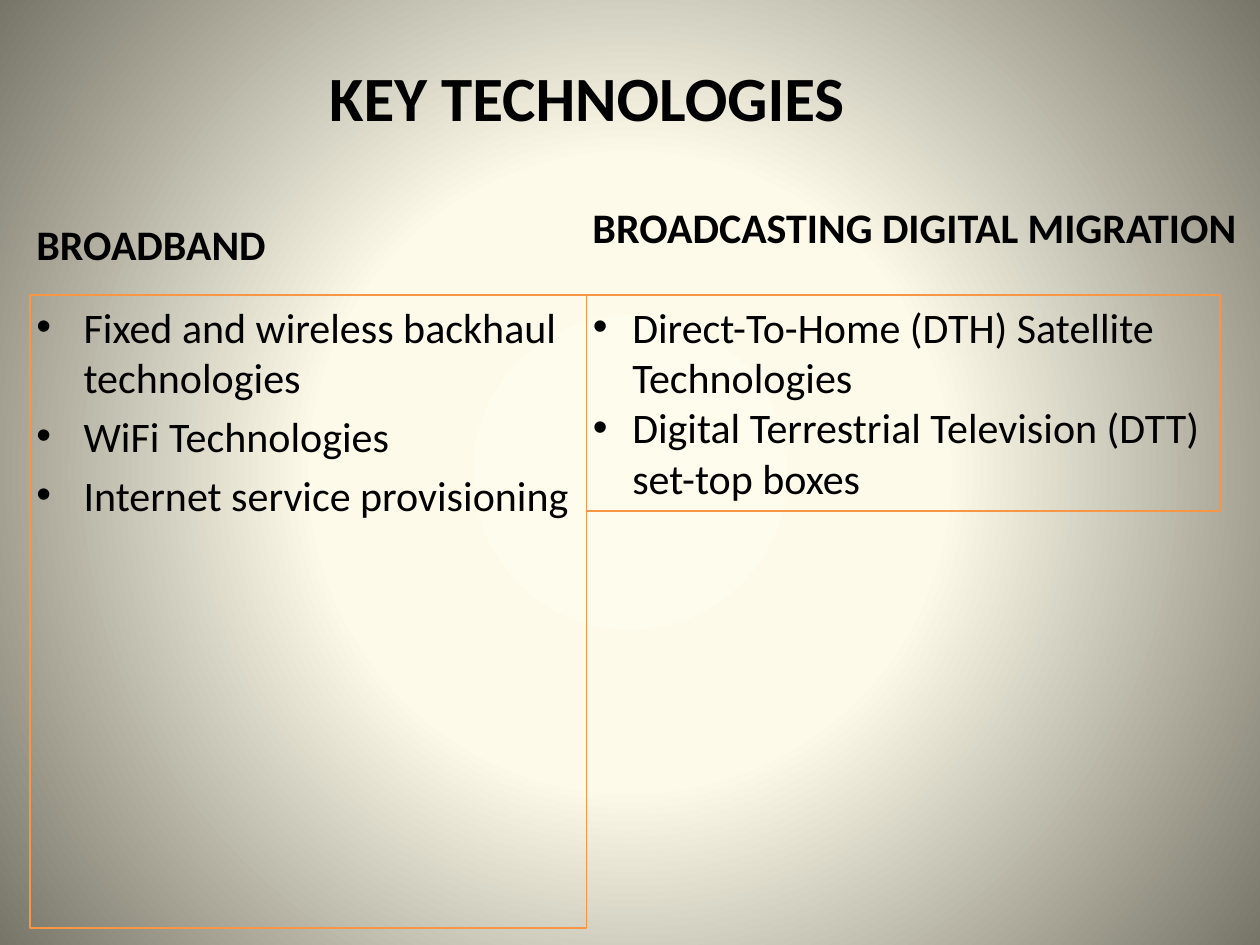
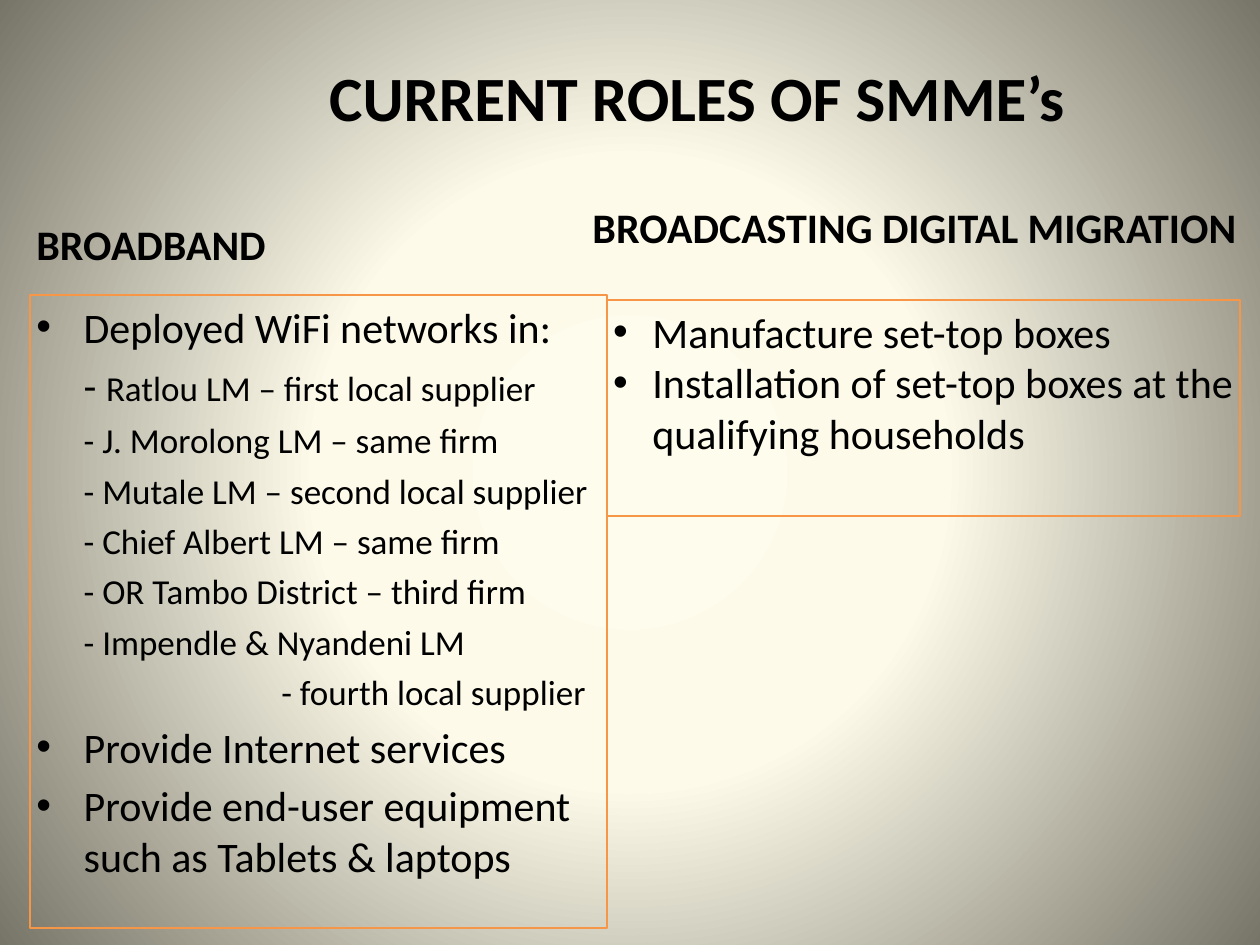
from dataclasses import dataclass

from lxml import etree
from pptx import Presentation
from pptx.dml.color import RGBColor
from pptx.enum.shapes import MSO_SHAPE
from pptx.enum.text import MSO_ANCHOR, PP_ALIGN
from pptx.oxml.ns import qn
from pptx.util import Pt

RECTANGLE = MSO_SHAPE.RECTANGLE
TOP, MIDDLE = MSO_ANCHOR.TOP, MSO_ANCHOR.MIDDLE
LEFT = PP_ALIGN.LEFT

BLACK = RGBColor(0x00, 0x00, 0x00)
ORANGE = RGBColor(0xF7, 0x96, 0x46)
GLOW = (
    (0, RGBColor(0xFE, 0xFC, 0xED)),
    (40, RGBColor(0xFD, 0xFA, 0xEA)),
    (100, RGBColor(0x77, 0x75, 0x67)),
)
FONT = "Calibri"
TITLE_SIZE, BODY_SIZE, DETAIL_SIZE = Pt(36), Pt(24), Pt(20)
INSET = Pt(3.6)
BULLET_INDENT, NARROW_INDENT, DEEP_INDENT = Pt(27), Pt(22.5), Pt(140)
BODY_GAP = Pt(4.8)
COLUMN_LEFT, COLUMN_TOP = Pt(17.2), Pt(168.5)


@dataclass
class Area:
    left: int
    top: int
    width: int
    height: int


@dataclass
class Item:
    text: str
    bullet: bool = True
    size: int = BODY_SIZE
    indent: int = BULLET_INDENT
    lead: str = ""  # opening mark set at body size


@dataclass
class Topic:
    title: str
    broadband: list[Item]
    broadband_width: int
    migration: list[Item]
    migration_top: int


TITLE_AREA = Area(Pt(184.5), Pt(-1), Pt(535.5), Pt(112))
HEADINGS = (
    ("BROADBAND", Area(COLUMN_LEFT, Pt(121.5), Pt(284), Pt(36))),
    ("BROADCASTING DIGITAL MIGRATION", Area(Pt(335), Pt(111.5), Pt(385), Pt(36))),
)


def detail(text: str, indent: int = BULLET_INDENT, lead: str = "") -> Item:
    return Item(text, False, DETAIL_SIZE, indent, lead)


def narrow(text: str) -> Item:
    return Item(text, indent=NARROW_INDENT)


TOPICS = [
    Topic(
        "KEY TECHNOLOGIES",
        [
            Item("Fixed and wireless backhaul technologies"),
            Item("WiFi Technologies"),
            Item("Internet service provisioning"),
        ],
        Pt(318),
        [
            narrow("Direct-To-Home (DTH) Satellite Technologies"),
            narrow("Digital Terrestrial Television (DTT) set-top boxes"),
        ],
        COLUMN_TOP,
    ),
    Topic(
        "CURRENT ROLES OF SMME’s",
        [
            Item("Deployed WiFi networks in:"),
            detail("Ratlou LM – first local supplier", lead="- "),
            detail("- J. Morolong LM – same firm"),
            detail("- Mutale LM – second local supplier"),
            detail("- Chief Albert LM – same firm"),
            detail("- OR Tambo District – third firm"),
            detail("- Impendle & Nyandeni LM"),
            detail("- fourth local supplier", DEEP_INDENT),
            Item("Provide Internet services"),
            Item("Provide end-user equipment such as Tablets & laptops"),
        ],
        Pt(329.5),
        [
            narrow("Manufacture set-top boxes"),
            narrow("Installation of set-top boxes at the qualifying households"),
        ],
        Pt(171.5),
    ),
]


def paint_background(page) -> None:
    """Fill the page with a circular gradient that darkens outwards."""
    page.background.fill.solid()
    solid = page.background._cSld.find(".//" + qn("a:solidFill"))
    gradient = etree.Element(qn("a:gradFill"), rotWithShape="1")
    stops = etree.SubElement(gradient, qn("a:gsLst"))
    for percent, color in GLOW:
        stop = etree.SubElement(stops, qn("a:gs"), pos=str(percent * 1000))
        etree.SubElement(stop, qn("a:srgbClr"), val=str(color))
    circle = etree.SubElement(gradient, qn("a:path"), path="circle")
    center = {side: "50000" for side in "ltrb"}
    etree.SubElement(circle, qn("a:fillToRect"), center)
    solid.getparent().replace(solid, gradient)


def prepare_frame(frame, anchor) -> None:
    frame.word_wrap = True
    frame.vertical_anchor = anchor
    frame.margin_left = frame.margin_right = INSET
    frame.margin_top = frame.margin_bottom = INSET


def style_span(span, size: int, bold: bool = False) -> None:
    span.font.name = FONT
    span.font.size = size
    span.font.bold = bold
    span.font.color.rgb = BLACK


def add_heading(page, text: str, area: Area, size: int, anchor=TOP) -> None:
    box = page.shapes.add_textbox(area.left, area.top, area.width, area.height)
    prepare_frame(box.text_frame, anchor)
    box.text_frame.text = text
    style_span(box.text_frame.paragraphs[0].runs[0], size, True)


def indent_para(para, item: Item) -> None:
    properties = para._p.get_or_add_pPr()
    properties.set("marL", str(item.indent))
    properties.set("indent", str(-item.indent if item.bullet else 0))
    if item.bullet:
        etree.SubElement(properties, qn("a:buFont"), typeface="Arial")
        etree.SubElement(properties, qn("a:buChar"), char="•")
    else:
        etree.SubElement(properties, qn("a:buNone"))


def add_list_box(page, items: list[Item], area: Area, gap: int) -> None:
    box = page.shapes.add_shape(RECTANGLE, area.left, area.top, area.width, area.height)
    box.shadow.inherit = False
    box.fill.background()
    box.line.color.rgb = ORANGE
    box.line.width = Pt(1)
    frame = box.text_frame
    prepare_frame(frame, TOP)
    for index, item in enumerate(items):
        para = frame.add_paragraph() if index else frame.paragraphs[0]
        para.text = item.lead or item.text
        if item.lead:
            para.add_run().text = item.text
        indent_para(para, item)
        para.alignment = LEFT
        para.space_before = gap if index else Pt(0)
        for span in para.runs:
            style_span(span, item.size)
        if item.lead:
            para.runs[0].font.size = BODY_SIZE


def add_topic_page(deck, topic: Topic) -> None:
    page = deck.slides.add_slide(deck.slide_layouts[6])
    paint_background(page)
    add_heading(page, topic.title, TITLE_AREA, TITLE_SIZE, MIDDLE)
    left_area = Area(COLUMN_LEFT, COLUMN_TOP, topic.broadband_width, Pt(362))
    right_area = Area(
        COLUMN_LEFT + topic.broadband_width, topic.migration_top, Pt(362), Pt(123.6)
    )
    add_list_box(page, topic.broadband, left_area, BODY_GAP)
    for text, area in HEADINGS:
        add_heading(page, text, area, BODY_SIZE)
    add_list_box(page, topic.migration, right_area, Pt(0))


def main() -> None:
    deck = Presentation()
    deck.slide_width, deck.slide_height = Pt(720), Pt(540)
    for topic in TOPICS:
        add_topic_page(deck, topic)
    deck.save("out.pptx")


if __name__ == "__main__":
    main()
